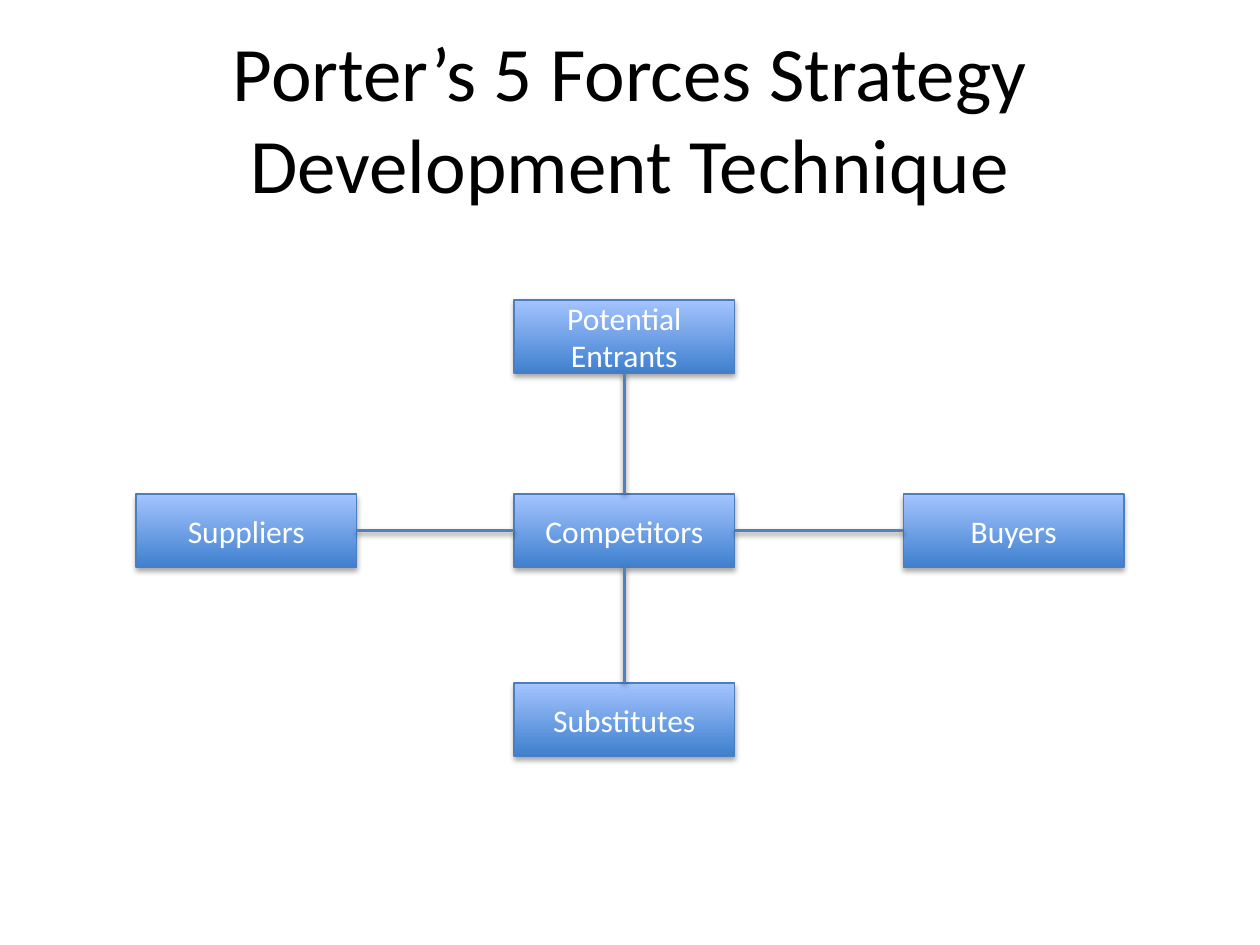
from lxml import etree
from pptx import Presentation
from pptx.dml.color import RGBColor
from pptx.enum.shapes import MSO_CONNECTOR, MSO_SHAPE
from pptx.enum.text import MSO_ANCHOR, PP_ALIGN
from pptx.oxml.ns import qn
from pptx.util import Inches, Pt

STRAIGHT = MSO_CONNECTOR.STRAIGHT
RECTANGLE = MSO_SHAPE.RECTANGLE
MIDDLE = MSO_ANCHOR.MIDDLE
CENTER = PP_ALIGN.CENTER

BLACK = RGBColor(0x00, 0x00, 0x00)
WHITE = RGBColor(0xFF, 0xFF, 0xFF)
BOX_BOTTOM = RGBColor(0x3F, 0x80, 0xCE)
BOX_TOP = RGBColor(0xA4, 0xC4, 0xFF)
BOX_LINE = RGBColor(0x4B, 0x7E, 0xBC)
LINK_LINE = RGBColor(0x4F, 0x81, 0xBD)

FONT = "Calibri"
BOX_WIDTH, BOX_HEIGHT = 1.75, 0.58
TOP, LEFT, BOTTOM, RIGHT = range(4)

# Force, left and top within the diagram, side of the centre box it joins
CENTRE_LEFT, CENTRE_TOP = 3, 1.54
FORCES = [
    ("Potential Entrants", CENTRE_LEFT, 0, TOP),
    ("Substitutes", CENTRE_LEFT, 3.04, BOTTOM),
    ("Suppliers", 0, CENTRE_TOP, LEFT),
    ("Buyers", 6.09, CENTRE_TOP, RIGHT),
]


def write_text(shape, text, size, color):
    frame = shape.text_frame
    frame.text = text
    frame.word_wrap = True
    frame.vertical_anchor = MIDDLE
    paragraph = frame.paragraphs[0]
    paragraph.alignment = CENTER
    font = paragraph.runs[0].font
    font.name = FONT
    font.size = Pt(size)
    font.color.rgb = color


def add_shadow(shape, distance, opacity):
    """Add a soft downward shadow; call after the line is set."""
    effects = etree.SubElement(shape.element.spPr, qn("a:effectLst"))
    shadow = etree.SubElement(
        effects, qn("a:outerShdw"), blurRad=str(Pt(3.1)),
        dist=str(Pt(distance)), dir="5400000", rotWithShape="0")
    color = etree.SubElement(shadow, qn("a:srgbClr"), val=str(BLACK))
    etree.SubElement(color, qn("a:alpha"), val=str(opacity * 1000))


def add_title(slide, left, top, width, height):
    title = slide.shapes.add_textbox(
        Inches(left), Inches(top), Inches(width), Inches(height))
    write_text(title, "Porter’s 5 Forces Strategy Development Technique", 44, BLACK)


def add_force_box(slide, text, left, top):
    box = slide.shapes.add_shape(
        RECTANGLE, Inches(left), Inches(top), Inches(BOX_WIDTH), Inches(BOX_HEIGHT))
    box.fill.gradient()
    box.fill.gradient_angle = 90
    for stop, color in zip(box.fill.gradient_stops, (BOX_BOTTOM, BOX_TOP)):
        stop.color.rgb = color
    box.line.color.rgb = BOX_LINE
    box.line.width = Pt(0.75)
    add_shadow(box, 1.8, 35)
    write_text(box, text, 18, WHITE)
    return box


def add_link(slide, centre, force, side):
    """Join one side of the centre box to the facing side of a force."""
    link = slide.shapes.add_connector(STRAIGHT, 0, 0, 0, 0)
    link.begin_connect(centre, side)
    link.end_connect(force, (side + 2) % 4)
    link.line.color.rgb = LINK_LINE
    link.line.width = Pt(2)
    add_shadow(link, 1.6, 38)


def add_forces_diagram(slide, left, top):
    centre = add_force_box(slide, "Competitors", left + CENTRE_LEFT, top + CENTRE_TOP)
    boxes = [(add_force_box(slide, text, left + x, top + y), side)
             for text, x, y, side in FORCES]
    for box, side in boxes:
        add_link(slide, centre, box, side)


def main():
    presentation = Presentation()
    presentation.slide_width = Inches(10)
    presentation.slide_height = Inches(7.5)
    slide = presentation.slides.add_slide(presentation.slide_layouts[6])
    add_title(slide, 0.5, 0.3, 9, 1.25)
    add_forces_diagram(slide, 1.08, 2.38)
    presentation.save("out.pptx")


if __name__ == "__main__":
    main()
